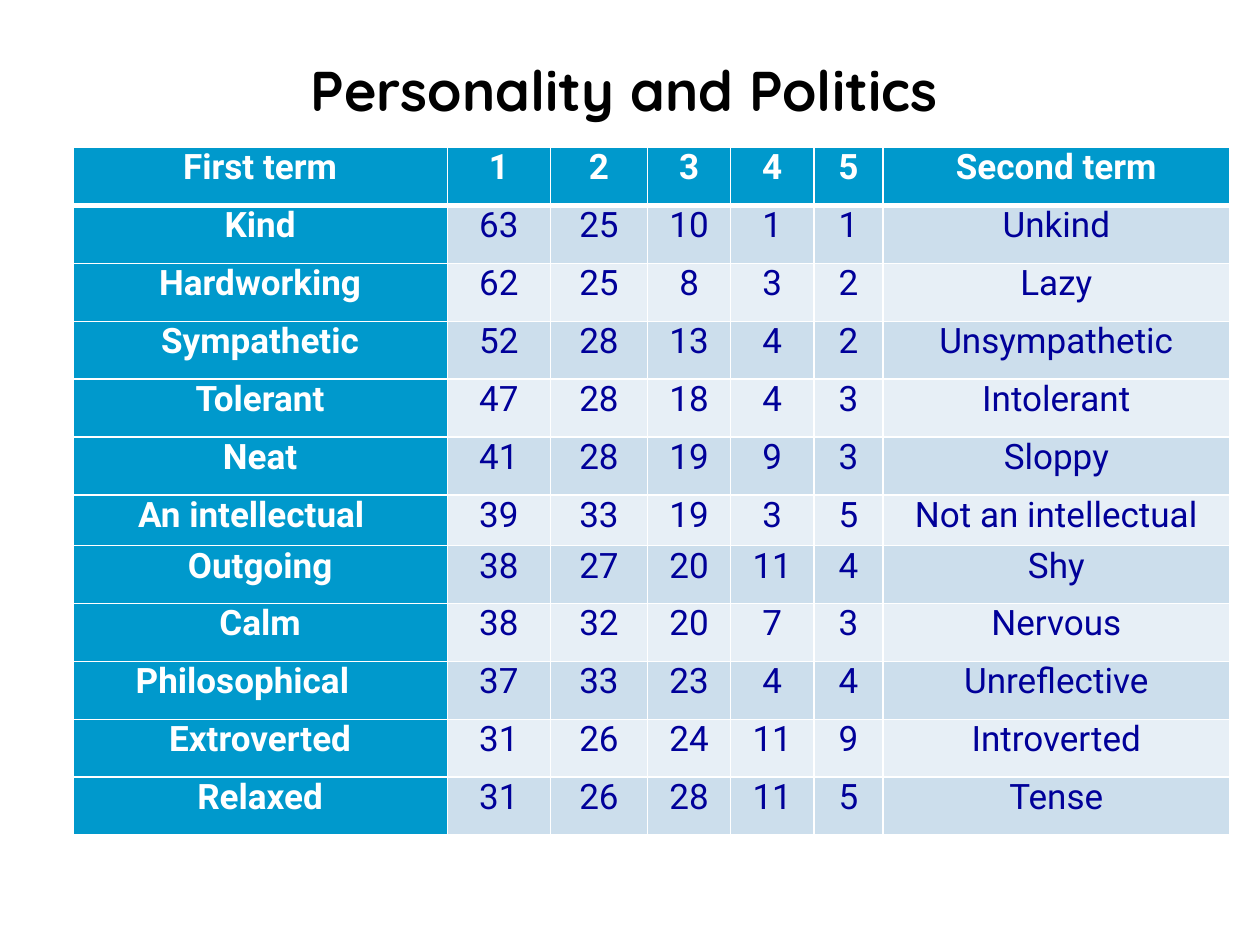
from dataclasses import dataclass

from lxml.etree import SubElement
from pptx import Presentation
from pptx.dml.color import RGBColor
from pptx.enum.text import MSO_ANCHOR as Anchor, PP_ALIGN as Align
from pptx.oxml.ns import qn
from pptx.util import Inches, Pt

SLIDE_WIDTH, SLIDE_HEIGHT = 10, 7.5
LEFT = 0.58
TABLE_TOP = 1.17
COLUMN_WIDTHS = (2.97, 0.82, 0.77, 0.66, 0.66, 0.55, 2.75)
ROW_HEIGHT, SHORT_ROW_HEIGHT = 0.46, 0.4
SHORT_ROW = 6
CELL_MARGIN = 0.07

BLACK = RGBColor(0x00, 0x00, 0x00)
WHITE = RGBColor(0xFF, 0xFF, 0xFF)
HEADER_BLUE = RGBColor(0x00, 0x99, 0xCC)
NAVY = RGBColor(0x00, 0x00, 0x99)
BANDS = (RGBColor(0xE7, 0xEF, 0xF6), RGBColor(0xCC, 0xDE, 0xEC))

TITLE_FORMAT = {"name": "Quicksand", "size": Pt(32), "bold": True}
HEADER_FORMAT = {"name": "Roboto", "size": Pt(20), "bold": True}
BODY_FORMAT = HEADER_FORMAT | {"bold": False}


@dataclass(frozen=True)
class Trait:
    first: str
    scores: tuple[int, ...]
    second: str
    extra_right_margin: float = 0

    def texts(self) -> list[str]:
        return [self.first, *map(str, self.scores), self.second]


ROWS = (
    Trait("First term", (1, 2, 3, 4, 5), "Second term"),
    Trait("Kind", (63, 25, 10, 1, 1), "Unkind"),
    Trait("Hardworking", (62, 25, 8, 3, 2), "Lazy"),
    Trait("Sympathetic", (52, 28, 13, 4, 2), "Unsympathetic"),
    Trait("Tolerant", (47, 28, 18, 4, 3), "Intolerant"),
    Trait("Neat", (41, 28, 19, 9, 3), "Sloppy"),
    Trait("An intellectual", (39, 33, 19, 3, 5), "Not an intellectual", 0.14),
    Trait("Outgoing", (38, 27, 20, 11, 4), "Shy"),
    Trait("Calm", (38, 32, 20, 7, 3), "Nervous"),
    Trait("Philosophical", (37, 33, 23, 4, 4), "Unreflective", 0.28),
    Trait("Extroverted", (31, 26, 24, 11, 9), "Introverted"),
    Trait("Relaxed", (31, 26, 28, 11, 5), "Tense"),
)


def write_text(frame, text: str, color: RGBColor, font_format: dict) -> None:
    paragraph = frame.paragraphs[0]
    paragraph.alignment = Align.CENTER
    run = paragraph.add_run()
    run.text = text
    for name, value in font_format.items():
        setattr(run.font, name, value)
    run.font.color.rgb = color


def add_borders(cell, row: int) -> None:
    """Draw thin white borders, with a thick rule under the header row."""
    properties = cell._tc.get_or_add_tcPr()
    widths = {"L": 1, "R": 1, "T": 3 if row == 1 else 1, "B": 3 if row == 0 else 1}
    for side, width in widths.items():
        line = SubElement(properties, qn(f"a:ln{side}"), w=str(Pt(width)))
        fill = SubElement(line, qn("a:solidFill"))
        SubElement(fill, qn("a:srgbClr"), val=str(WHITE))


def style_cell(cell, row: int, column: int, text: str) -> None:
    is_header = row == 0 or column == 0
    extra = ROWS[row].extra_right_margin if column == 0 else 0
    margins = {
        "margin_left": CELL_MARGIN,
        "margin_right": CELL_MARGIN + extra,
        "margin_top": 0,
        "margin_bottom": 0,
    }
    for name, value in margins.items():
        setattr(cell, name, Inches(value))
    add_borders(cell, row)
    cell.fill.solid()
    cell.fill.fore_color.rgb = HEADER_BLUE if is_header else BANDS[row % 2]
    write_text(
        cell.text_frame,
        text,
        WHITE if is_header else NAVY,
        HEADER_FORMAT if is_header else BODY_FORMAT,
    )


def add_title(slide, text: str) -> None:
    box = slide.shapes.add_textbox(
        Inches(LEFT), Inches(0.42), Inches(8.75), Inches(0.58)
    )
    frame = box.text_frame
    frame.word_wrap = True
    frame.vertical_anchor = Anchor.BOTTOM
    frame.margin_top = frame.margin_bottom = Inches(0.03)
    write_text(frame, text, BLACK, TITLE_FORMAT)


def add_trait_table(slide) -> None:
    heights = [
        SHORT_ROW_HEIGHT if row == SHORT_ROW else ROW_HEIGHT
        for row in range(len(ROWS))
    ]
    table = slide.shapes.add_table(
        len(ROWS),
        len(COLUMN_WIDTHS),
        Inches(LEFT),
        Inches(TABLE_TOP),
        Inches(sum(COLUMN_WIDTHS)),
        Inches(sum(heights)),
    ).table
    for column, width in zip(table.columns, COLUMN_WIDTHS):
        column.width = Inches(width)
    for row, height in zip(table.rows, heights):
        row.height = Inches(height)
    for row, trait in enumerate(ROWS):
        for column, text in enumerate(trait.texts()):
            style_cell(table.cell(row, column), row, column, text)


def main() -> None:
    presentation = Presentation()
    presentation.slide_width = Inches(SLIDE_WIDTH)
    presentation.slide_height = Inches(SLIDE_HEIGHT)
    slide = presentation.slides.add_slide(presentation.slide_layouts[6])
    add_title(slide, "Personality and Politics")
    add_trait_table(slide)
    presentation.save("out.pptx")


if __name__ == "__main__":
    main()
